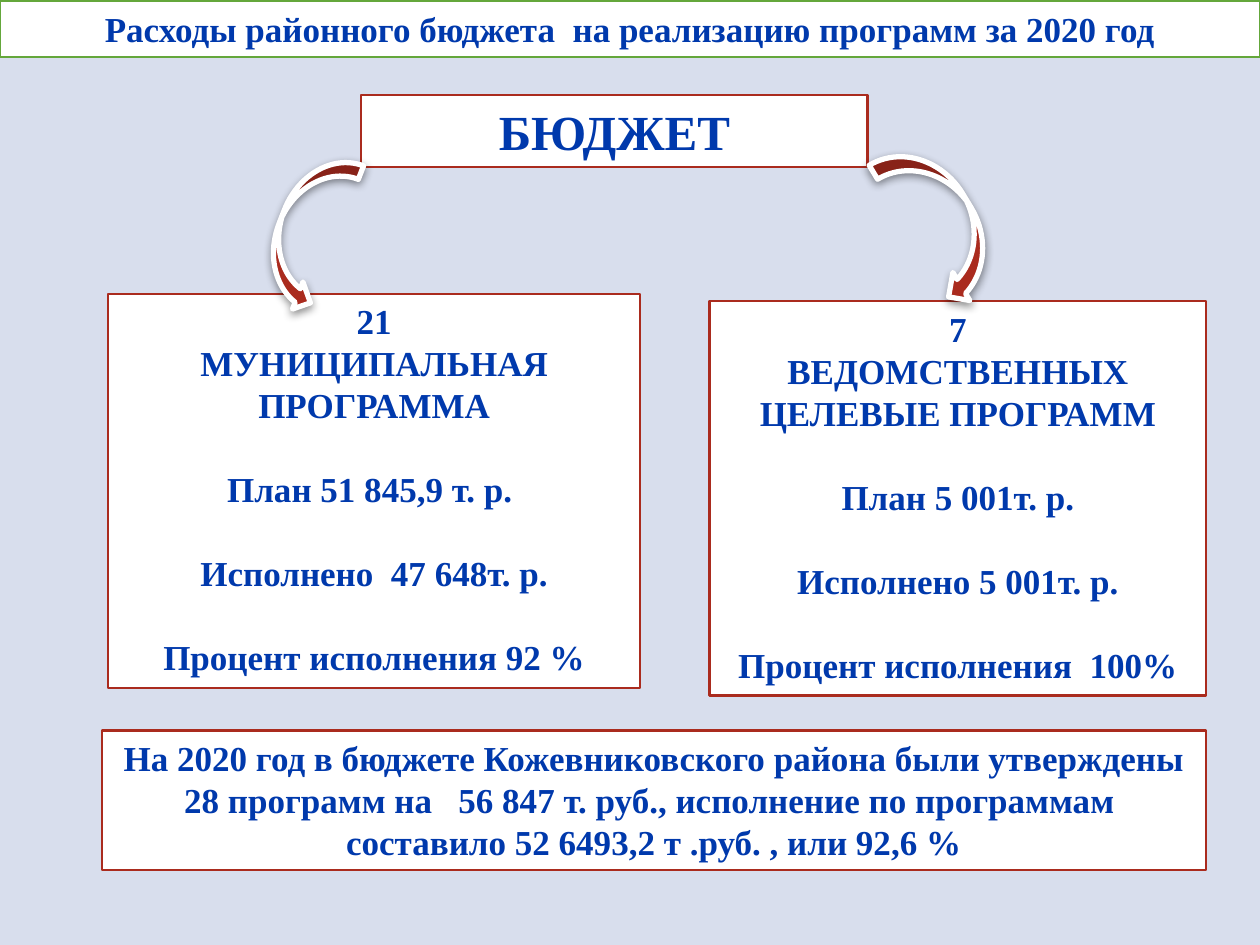
from pptx import Presentation
from pptx import util as u
from pptx.dml.color import RGBColor
from pptx.enum import shapes, text
from pptx.oxml import parse_xml
from pptx.oxml.ns import nsdecls

COLOURS = {
    "background": "D8DEED",
    "panel": "FFFFFF",
    "text": "0039AC",
    "red": "AA2B1E",
    "green": "64A73B",
    "shadow": "000000",
}
FONT = "Times New Roman"
LINE_HEIGHT = 1.2


def colour(name):
    return RGBColor.from_string(COLOURS[name])


def paint(shape, fill, line, width):
    shape.fill.solid()
    shape.fill.fore_color.rgb = colour(fill)
    shape.line.color.rgb = colour(line)
    shape.line.width = u.Pt(width)


def write(box, lines, size=20):
    """Fill the box with centred lines; each line is (text, space before)."""
    frame = box.text_frame
    frame.word_wrap = True
    frame.auto_size = text.MSO_AUTO_SIZE.NONE
    frame.vertical_anchor = text.MSO_ANCHOR.TOP
    frame.margin_left = frame.margin_right = u.Pt(7.2)
    frame.margin_top = frame.margin_bottom = u.Pt(3.6)
    for index, (words, gap) in enumerate(lines):
        para = frame.paragraphs[0] if index == 0 else frame.add_paragraph()
        para.alignment = text.PP_ALIGN.CENTER
        para.line_spacing = u.Pt(size * LINE_HEIGHT)
        para.space_before = u.Pt(gap)
        span = para.add_run()
        span.text = words
        span.font.name = FONT
        span.font.size = u.Pt(size)
        span.font.bold = True
        span.font.color.rgb = colour("text")


def add_title(page, words, left, top, width, height):
    title = page.shapes.title
    title.left, title.top = u.Pt(left), u.Pt(top)
    title.width, title.height = u.Pt(width), u.Pt(height)
    paint(title, "panel", "green", 1.25)
    write(title, [(words, 0)])


def add_shape(page, kind, left, top, width, height):
    shape = page.shapes.add_shape(
        kind, u.Pt(left), u.Pt(top), u.Pt(width), u.Pt(height))
    shape.shadow.inherit = False
    return shape


def add_panel(page, place, lines, size=20):
    panel = add_shape(page, shapes.MSO_SHAPE.RECTANGLE, *place)
    paint(panel, "panel", "red", 1.25)
    write(panel, lines, size)


def add_programmes(page, place, count, kind, results):
    """Panel with a programme count, its kind and results set one line apart."""
    gap = 20 * LINE_HEIGHT
    lines = [(count, 0), (kind, 0)] + [(result, gap) for result in results]
    add_panel(page, place, lines)


def add_curved_arrow(page, kind, place, rotation):
    arrow = add_shape(page, kind, *place)
    arrow.rotation = rotation
    paint(arrow, "red", "panel", 3)
    effects = arrow._element.spPr.find(
        "{http://schemas.openxmlformats.org/drawingml/2006/main}effectLst")
    effects.append(parse_xml(
        f'<a:outerShdw {nsdecls("a")} blurRad="{u.Pt(5)}" dist="{u.Pt(2)}" '
        f'dir="5400000" rotWithShape="0"><a:srgbClr val="{COLOURS["shadow"]}">'
        '<a:alpha val="43000"/></a:srgbClr></a:outerShdw>'))


def main():
    deck = Presentation()
    deck.slide_width, deck.slide_height = u.Pt(720), u.Pt(540)
    page = deck.slides.add_slide(deck.slide_layouts[5])
    page.background.fill.solid()
    page.background.fill.fore_color.rgb = colour("background")

    add_title(page, "Расходы районного бюджета  на реализацию программ за 2020 год",
              0, 0.7, 720, 31.7)
    add_panel(page, (206.4, 54.5, 289.4, 41), [("БЮДЖЕТ", 0)], 28)
    add_programmes(
        page, (405.4, 172.1, 283.9, 225.4), "7", "ВЕДОМСТВЕННЫХ ЦЕЛЕВЫЕ ПРОГРАММ",
        ["План 5 001т. р.", "Исполнено 5 001т. р.", "Процент исполнения  100%"])
    add_programmes(
        page, (61.9, 167.8, 303.8, 225.4), "21", "МУНИЦИПАЛЬНАЯ ПРОГРАММА",
        ["План 51 845,9 т. р. ", "Исполнено  47 648т. р.", "Процент исполнения 92 %"])
    add_curved_arrow(page, shapes.MSO_SHAPE.CURVED_LEFT_ARROW,
                     (519.1, 77.8, 37.4, 97.2), 328.9)
    add_curved_arrow(page, shapes.MSO_SHAPE.CURVED_RIGHT_ARROW,
                     (159.1, 85.7, 33.1, 92.2), 21.2)
    add_panel(page, (58.3, 417.4, 630.7, 79.9), [(
        "На 2020 год в бюджете Кожевниковского района были утверждены "
        "28 программ на   56 847 т. руб., исполнение по программам  "
        "составило 52 6493,2 т .руб. , или 92,6 %", 0)])
    deck.save("out.pptx")


if __name__ == "__main__":
    main()
